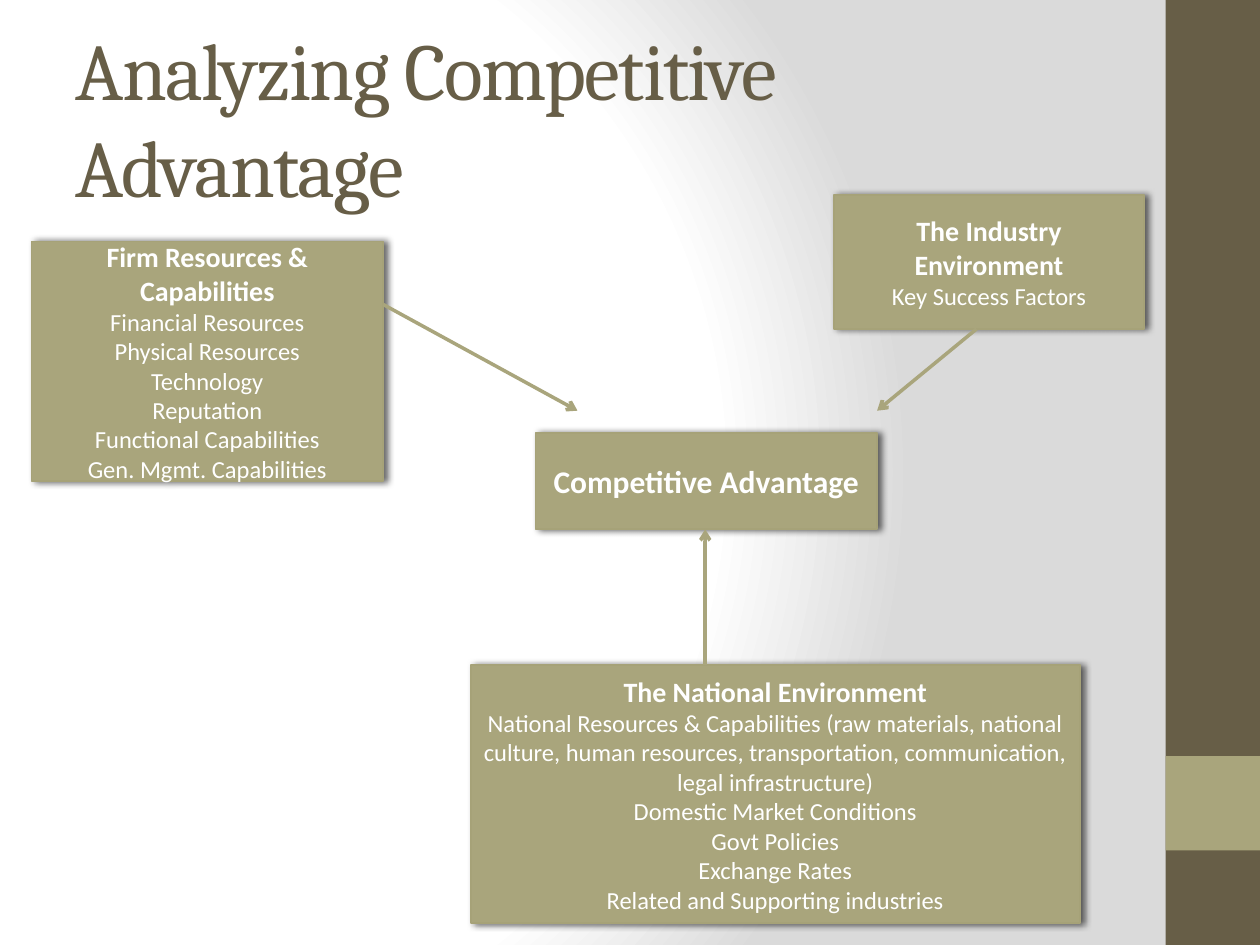
from pptx import Presentation
from pptx.dml.color import RGBColor
from pptx.enum.shapes import MSO_CONNECTOR, MSO_SHAPE
from pptx.enum.text import MSO_ANCHOR, MSO_AUTO_SIZE, PP_ALIGN
from pptx.oxml import parse_xml
from pptx.oxml.ns import qn
from pptx.util import Pt
from lxml import etree

BROWN = RGBColor(0x67, 0x5E, 0x47)
OLIVE = RGBColor(0xA9, 0xA5, 0x7C)
EDGE = RGBColor(0xA6, 0xA2, 0x78)
WHITE = RGBColor(0xFF, 0xFF, 0xFF)
NS = 'xmlns:a="http://schemas.openxmlformats.org/drawingml/2006/main"'

GRADIENT = f'''<a:gradFill {NS} rotWithShape="1"><a:gsLst>
<a:gs pos="0"><a:srgbClr val="FFFFFF"/></a:gs>
<a:gs pos="75000"><a:srgbClr val="FFFFFF"/></a:gs>
<a:gs pos="100000"><a:srgbClr val="DADADA"/></a:gs></a:gsLst>
<a:path path="circle"><a:fillToRect l="20000" t="50000" r="100000" b="50000"/></a:path>
</a:gradFill>'''
SHADOW = f'''<a:effectLst {NS}><a:outerShdw blurRad="50800" dist="25400" dir="0" rotWithShape="0">
<a:srgbClr val="000000"><a:alpha val="60000"/></a:srgbClr></a:outerShdw></a:effectLst>'''


def add_rect(x, y, w, h, color):
    sp = s.shapes.add_shape(MSO_SHAPE.RECTANGLE, Pt(x), Pt(y), Pt(w), Pt(h))
    sp.shadow.inherit = False
    sp.fill.solid()
    sp.fill.fore_color.rgb = color
    sp.line.fill.background()
    return sp


def format_run(r, size, name, color, bold):
    fmt = {"size": Pt(size), "name": name, "bold": bold}
    for key, value in fmt.items():
        setattr(r.font, key, value)
    r.font.color.rgb = color


prs = Presentation()
prs.slide_width, prs.slide_height = Pt(720), Pt(540)
s = prs.slides.add_slide(prs.slide_layouts[5])

# Background gradient
s.background.fill.solid()
solid = s.element.find(".//" + qn("p:bgPr")).find(qn("a:solidFill"))
solid.getparent().replace(solid, parse_xml(GRADIENT))

# Side bar
add_rect(666, 0, 54, 540, BROWN)
add_rect(666, 432, 54, 54, OLIVE)

# Title
title = s.shapes.title
place = {"left": 36, "top": 21.6, "width": 600, "height": 90}
for key, value in place.items():
    setattr(title, key, Pt(value))
tf = title.text_frame
tf.text = "Analyzing Competitive Advantage"
tf.auto_size = MSO_AUTO_SIZE.NONE
tf.vertical_anchor = MSO_ANCHOR.MIDDLE
p = tf.paragraphs[0]
p.alignment = PP_ALIGN.LEFT
r = p.runs[0]
format_run(r, 46, "Cambria", BROWN, False)
r.font._element.set("spc", "-100")

# Boxes: position, heading size, heading, items
boxes = [
    ((18, 138, 201, 137), 16, "Firm Resources & Capabilities",
     ["Financial Resources", "Physical Resources", "Technology", "Reputation",
      "Functional Capabilities", "Gen. Mgmt. Capabilities"]),
    ((269, 380, 348, 147.6), 16, "The National Environment",
     ["National Resources & Capabilities (raw materials, national culture, "
      "human resources, transportation, communication, legal infrastructure)",
      "Domestic Market Conditions", "Govt Policies", "Exchange Rates",
      "Related and Supporting industries"]),
    ((476.7, 111.5, 177, 76.4), 16, "The Industry Environment",
     ["Key Success Factors"]),
    ((306, 247.5, 195.2, 55), 18, "Competitive Advantage", []),
]
for box, head_size, heading, items in boxes:
    sp = add_rect(*box, OLIVE)
    sp.line.color.rgb = EDGE
    sp.line.width = Pt(1)
    effects = sp._element.spPr.find(qn("a:effectLst"))
    effects.getparent().replace(effects, parse_xml(SHADOW))
    tf = sp.text_frame
    tf.word_wrap = True
    tf.vertical_anchor = MSO_ANCHOR.MIDDLE
    for i, text in enumerate([heading] + items):
        p = tf.add_paragraph() if i else tf.paragraphs[0]
        p.alignment = PP_ALIGN.CENTER
        r = p.add_run()
        r.text = text
        format_run(r, 14 if i else head_size, "Calibri", WHITE, i == 0)

# Arrows towards the competitive advantage
arrows = [
    (403, 380, 403, 302.5),
    (219, 174, 330, 234.7),
    (558, 188, 501.2, 234.7),
]
for ends in arrows:
    c = s.shapes.add_connector(MSO_CONNECTOR.STRAIGHT, *[Pt(v) for v in ends])
    c.line.color.rgb = OLIVE
    c.line.width = Pt(2)
    etree.SubElement(c.line._get_or_add_ln(), qn("a:tailEnd"), type="arrow")
    etree.SubElement(c._element.spPr, qn("a:effectLst"))

prs.save("out.pptx")
